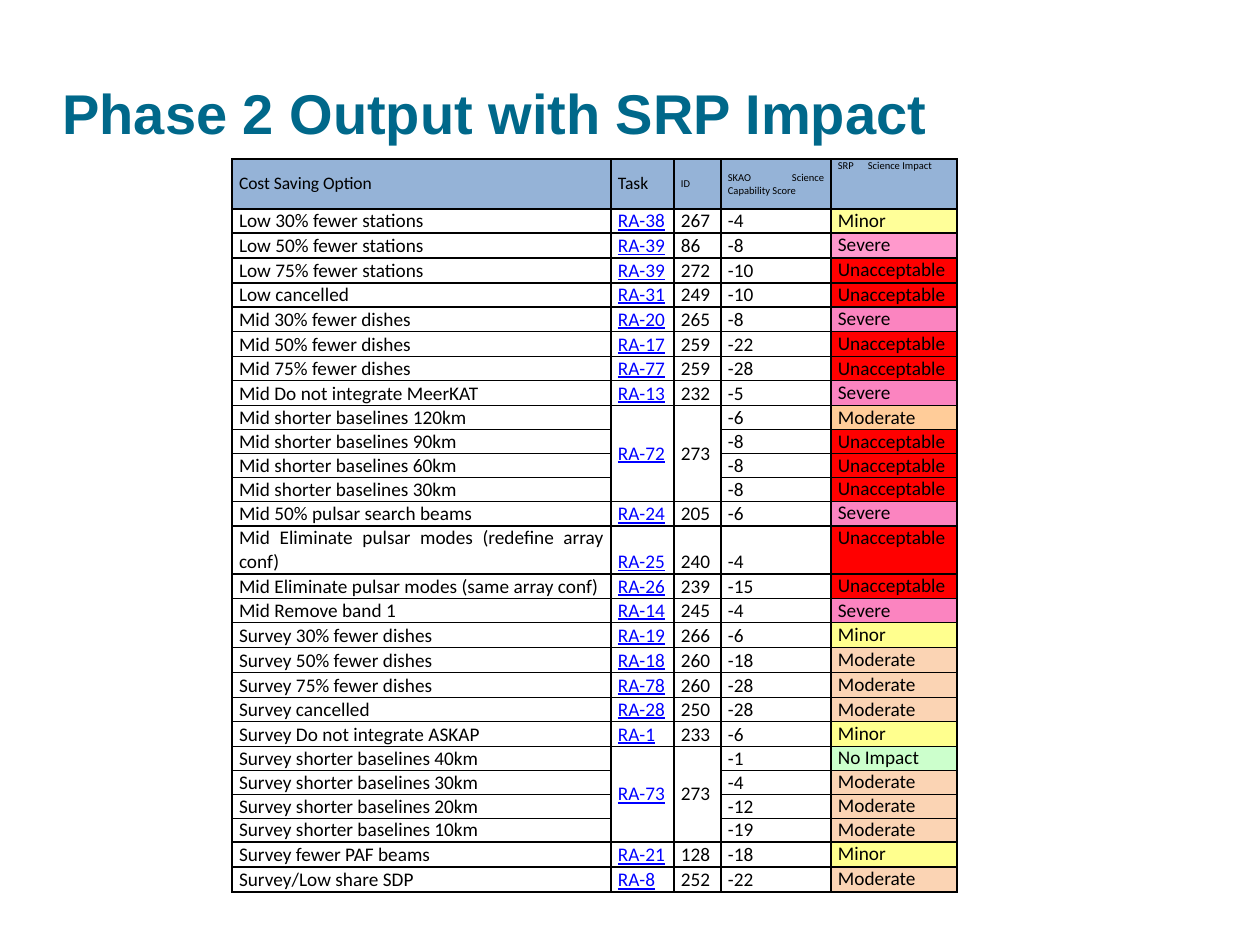
"""Build the slide of cost saving options and their science impact."""
from lxml import etree
from pptx import Presentation
from pptx import util as u
from pptx.dml.color import RGBColor
from pptx.enum import text
from pptx.oxml import ns

PX = 914400 // 126
BLACK = RGBColor(0x00, 0x00, 0x00)
TEAL = RGBColor(0x00, 0x68, 0x8A)
LINK = RGBColor(0x00, 0x00, 0xFF)
HEADER = RGBColor(0x95, 0xB3, 0xD7)
RED = RGBColor(0xFF, 0x00, 0x00)
PINK = RGBColor(0xFB, 0x84, 0xC0)
LIGHT_PINK = RGBColor(0xFF, 0x99, 0xCC)
YELLOW = RGBColor(0xFF, 0xFF, 0x8E)
LIGHT_YELLOW = RGBColor(0xFF, 0xFF, 0x99)
ORANGE = RGBColor(0xFF, 0xCC, 0x99)
PEACH = RGBColor(0xFB, 0xD4, 0xB4)
GREEN = RGBColor(0xCC, 0xFF, 0xCC)
TOP, MIDDLE, BOTTOM = text.MSO_ANCHOR.TOP, text.MSO_ANCHOR.MIDDLE, text.MSO_ANCHOR.BOTTOM

HEADINGS = [("Cost Saving Option", 10), ("Task", 10), ("ID", 6),
            ("SKAO Science Capability Score", 6), ("SRP\tScience Impact", 6)]
OPTIONS = [
    ("Low 30% fewer stations", "RA-38", "267", "-4", "Minor", LIGHT_YELLOW),
    ("Low 50% fewer stations", "RA-39", "86", "-8", "Severe", LIGHT_PINK),
    ("Low 75% fewer stations", "RA-39", "272", "-10", "Unacceptable", RED),
    ("Low cancelled", "RA-31", "249", "-10", "Unacceptable", RED),
    ("Mid 30% fewer dishes", "RA-20", "265", "-8", "Severe", PINK),
    ("Mid 50% fewer dishes", "RA-17", "259", "-22", "Unacceptable", RED),
    ("Mid 75% fewer dishes", "RA-77", "259", "-28", "Unacceptable", RED),
    ("Mid Do not integrate MeerKAT", "RA-13", "232", "-5", "Severe", PINK),
    ("Mid shorter baselines 120km", "RA-72", "273", "-6", "Moderate", ORANGE),
    ("Mid shorter baselines 90km", "", "", "-8", "Unacceptable", RED),
    ("Mid shorter baselines 60km", "", "", "-8", "Unacceptable", RED),
    ("Mid shorter baselines 30km", "", "", "-8", "Unacceptable", RED),
    ("Mid 50% pulsar search beams", "RA-24", "205", "-6", "Severe", PINK),
    ("Mid Eliminate pulsar modes (redefine array conf)", "RA-25", "240", "-4", "Unacceptable", RED),
    ("Mid Eliminate pulsar modes (same array conf)", "RA-26", "239", "-15", "Unacceptable", RED),
    ("Mid Remove band 1", "RA-14", "245", "-4", "Severe", PINK),
    ("Survey 30% fewer dishes", "RA-19", "266", "-6", "Minor", YELLOW),
    ("Survey 50% fewer dishes", "RA-18", "260", "-18", "Moderate", PEACH),
    ("Survey 75% fewer dishes", "RA-78", "260", "-28", "Moderate", PEACH),
    ("Survey cancelled", "RA-28", "250", "-28", "Moderate", PEACH),
    ("Survey Do not integrate ASKAP", "RA-1", "233", "-6", "Minor", YELLOW),
    ("Survey shorter baselines 40km", "RA-73", "273", "-1", "No Impact", GREEN),
    ("Survey shorter baselines 30km", "", "", "-4", "Moderate", PEACH),
    ("Survey shorter baselines 20km", "", "", "-12", "Moderate", PEACH),
    ("Survey shorter baselines 10km", "", "", "-19", "Moderate", PEACH),
    ("Survey fewer PAF beams", "RA-21", "128", "-18", "Minor", YELLOW),
    ("Survey/Low share SDP", "RA-8", "252", "-22", "Moderate", PEACH),
]
COL_WIDTHS = [379, 63, 47, 110, 126]
ROW_EDGES = [159, 209, 233, 258, 283, 307, 332, 357, 381, 406, 430, 454, 478, 501, 526,
             573, 598, 622, 647, 672, 697, 721, 746, 770, 794, 818, 841, 866, 891]


def write(tf, words, size=11, font="Calibri", color=BLACK, bold=False, underline=False,
          align=text.PP_ALIGN.JUSTIFY, tab=None):
    p = tf.paragraphs[0]
    p.alignment = align
    if tab:
        tabs = etree.SubElement(p._p.get_or_add_pPr(), ns.qn("a:tabLst"))
        etree.SubElement(tabs, ns.qn("a:tab"), pos=str(tab * PX), algn="l")
    r = p.add_run()
    r.text = words
    r.font.size, r.font.name = u.Pt(size), font
    r.font.bold, r.font.underline = bold, underline
    r.font.color.rgb = color


def style_cell(cell, anchor, fill=None):
    cell.margin_left = cell.margin_right = 7 * PX
    cell.margin_top = cell.margin_bottom = 0
    cell.vertical_anchor = anchor
    tcPr = cell._tc.get_or_add_tcPr()
    for side in ("a:lnL", "a:lnR", "a:lnT", "a:lnB"):
        ln = etree.SubElement(tcPr, ns.qn(side), w=str(u.Pt(1)))
        solid = etree.SubElement(ln, ns.qn("a:solidFill"))
        etree.SubElement(solid, ns.qn("a:srgbClr"), val=str(BLACK))
    if fill is None:
        cell.fill.background()
    else:
        cell.fill.solid()
        cell.fill.fore_color.rgb = fill


prs = Presentation()
prs.slide_width, prs.slide_height = 1260 * PX, 945 * PX
s = prs.slides.add_slide(prs.slide_layouts[6])

frame = s.shapes.add_table(len(OPTIONS) + 1, len(COL_WIDTHS), 232 * PX, ROW_EDGES[0] * PX,
                           sum(COL_WIDTHS) * PX, (ROW_EDGES[-1] - ROW_EDGES[0]) * PX)
table = frame.table
table.first_row = table.horz_banding = False
for col, width in zip(table.columns, COL_WIDTHS):
    col.width = width * PX
for row, top, bottom in zip(table.rows, ROW_EDGES, ROW_EDGES[1:]):
    row.height = (bottom - top) * PX

for c, (words, size) in enumerate(HEADINGS):
    cell = table.cell(0, c)
    style_cell(cell, TOP if c == 4 else MIDDLE, HEADER)
    write(cell.text_frame, words, size=size, tab=30 if c == 4 else None)

for i, (*values, impact_fill) in enumerate(OPTIONS, start=1):
    for c, words in enumerate(values):
        cell = table.cell(i, c)
        shared = c in (1, 2) and values[2] == "273"
        style_cell(cell, TOP if c == 4 else MIDDLE if shared else BOTTOM,
                   impact_fill if c == 4 else None)
        if words:
            write(cell.text_frame, words, color=LINK if c == 1 else BLACK, underline=c == 1)
        if shared:
            cell.merge(table.cell(i + 3, c))

sp = s.shapes.add_textbox(50 * PX, 69 * PX, 963 * PX, 86 * PX)
tf = sp.text_frame
tf.word_wrap = True
tf.vertical_anchor = MIDDLE
write(tf, "Phase 2 Output with SRP Impact", size=32, font="Arial", color=TEAL, bold=True,
      align=text.PP_ALIGN.LEFT)

prs.save("out.pptx")
